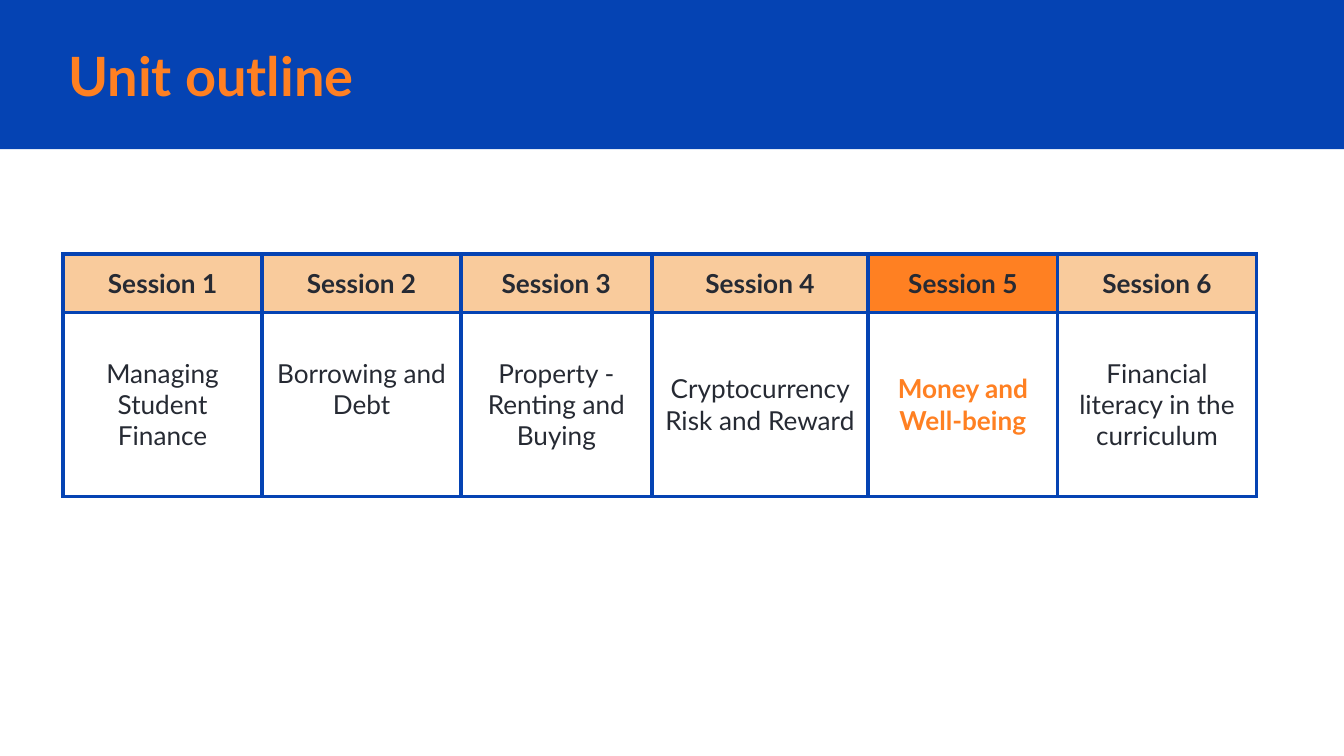
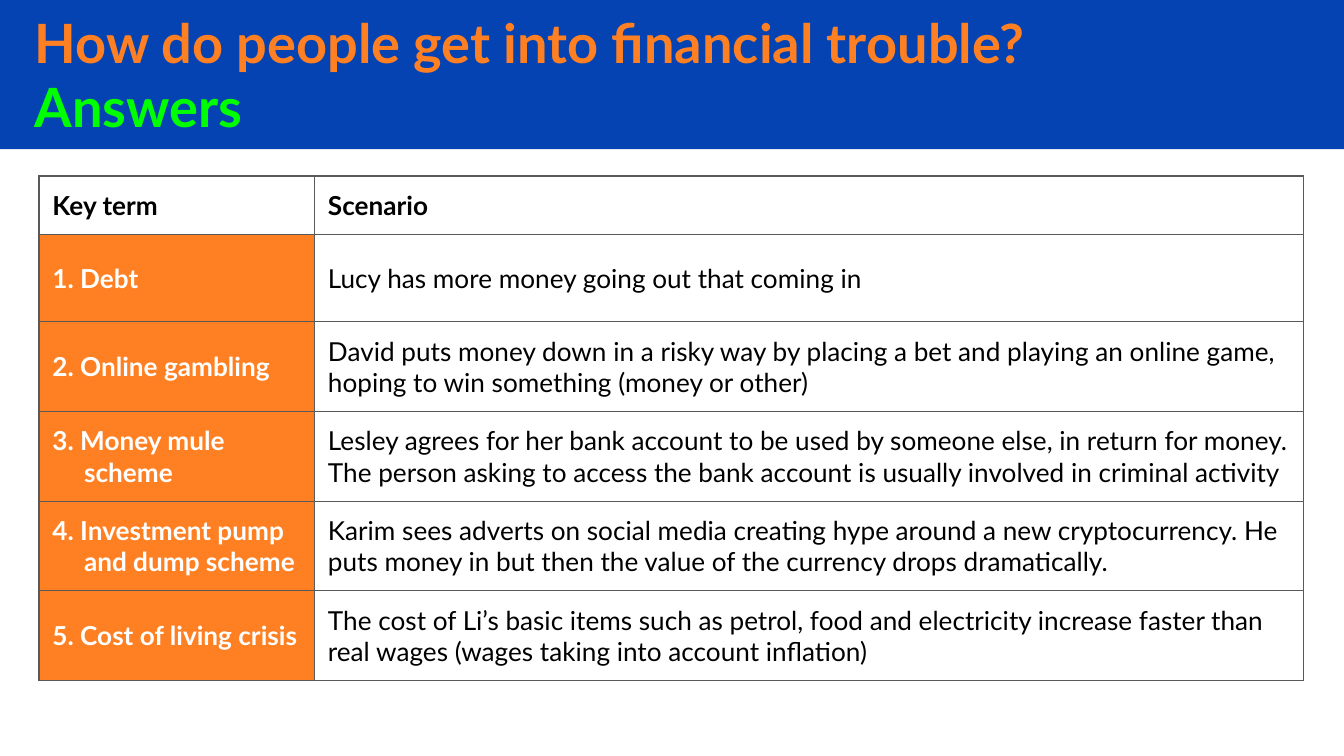
from lxml import etree
from pptx import Presentation
from pptx.dml.color import RGBColor
from pptx.enum.shapes import MSO_SHAPE
from pptx.enum.text import MSO_ANCHOR, PP_ALIGN
from pptx.oxml.ns import qn
from pptx.util import Pt

RECTANGLE = MSO_SHAPE.RECTANGLE
MIDDLE = MSO_ANCHOR.MIDDLE
LEFT, CENTER = PP_ALIGN.LEFT, PP_ALIGN.CENTER

BLUE = RGBColor(0x05, 0x43, 0xB3)
ORANGE = RGBColor(0xFF, 0x80, 0x22)
PEACH = RGBColor(0xF9, 0xCB, 0x9C)
GREEN = RGBColor(0x00, 0xFF, 0x00)
INK = RGBColor(0x26, 0x2A, 0x33)
GREY = RGBColor(0x59, 0x59, 0x59)
BLACK = RGBColor(0x00, 0x00, 0x00)
WHITE = RGBColor(0xFF, 0xFF, 0xFF)

FONT = "Lato"
TITLE_SIZE, TABLE_SIZE = 29, 14
PX = 4572
PAGE_WIDTH, PAGE_HEIGHT, BAND_HEIGHT = 2000, 1125, 222
MARGIN = 20
HANGING_INDENT = 47
BLANK_LAYOUT = 6

SESSIONS = [
    ("Managing Student Finance", 296),
    ("Borrowing and Debt", 296),
    ("Property - Renting and Buying", 284),
    ("Cryptocurrency Risk and Reward", 322),
    ("Money and Well-being", 282),
    ("Financial literacy in the curriculum", 296),
]
CURRENT_SESSION = 5
RAISED_SESSION = 2
RAISED_MARGIN = 66

SCENARIOS = [
    ("1. Debt", "Lucy has more money going out that coming in"),
    ("2. Online gambling",
     "David puts money down in a risky way by placing a bet and playing an online game, "
     "hoping to win something (money or other)"),
    ("3. Money mule\nscheme",
     "Lesley agrees for her bank account to be used by someone else, in return for money. "
     "The person asking to access the bank account is usually involved in criminal activity"),
    ("4. Investment pump\nand dump scheme",
     "Karim sees adverts on social media creating hype around a new cryptocurrency. He puts "
     "money in but then the value of the currency drops dramatically."),
    ("5. Cost of living crisis",
     "The cost of Li’s basic items such as petrol, food and electricity increase faster than "
     "real wages (wages taking into account inflation)"),
]


def scale(*lengths):
    """Turn px lengths into EMU."""
    return [length * PX for length in lengths]


def style_font(font, size, color, bold):
    """Apply the deck typeface with a size, colour and weight."""
    font.name, font.size, font.bold = FONT, Pt(size), bold
    font.color.rgb = color


def set_margins(holder):
    """Give a cell or text frame equal margins on all sides."""
    for side in ("left", "top", "right", "bottom"):
        setattr(holder, f"margin_{side}", MARGIN * PX)


def add_titled_page(deck, box, parts):
    """Add a page with the blue band and a title made of coloured parts."""
    page = deck.slides.add_slide(deck.slide_layouts[BLANK_LAYOUT])
    band = page.shapes.add_shape(RECTANGLE, *scale(0, 0, PAGE_WIDTH, BAND_HEIGHT))
    band.shadow.inherit = False
    band.fill.solid()
    band.fill.fore_color.rgb = BLUE
    band.line.fill.background()

    frame = page.shapes.add_textbox(*scale(*box)).text_frame
    frame.word_wrap = True
    frame.vertical_anchor = MIDDLE
    set_margins(frame)
    for text, color in parts:
        span = frame.paragraphs[0].add_run()
        span.text = text
        style_font(span.font, TITLE_SIZE, color, True)
    return page


def add_grid(page, left, top, widths, heights):
    """Add a plain table with the given column widths and row heights."""
    frame = page.shapes.add_table(
        len(heights), len(widths), *scale(left, top, sum(widths), sum(heights)))
    table = frame.table
    table.first_row = table.horz_banding = False
    for column, width in zip(table.columns, widths):
        column.width = width * PX
    for row, height in zip(table.rows, heights):
        row.height = height * PX
    return table


def add_borders(cell, color, weight):
    """Draw a solid line on the four sides of a cell."""
    properties = cell._tc.get_or_add_tcPr()
    for side in ("lnL", "lnR", "lnT", "lnB"):
        line = etree.SubElement(properties, qn(f"a:{side}"), w=str(Pt(weight)))
        fill = etree.SubElement(line, qn("a:solidFill"))
        etree.SubElement(fill, qn("a:srgbClr"), val=str(color))


def fill_cell(cell, text, color, bold, fill, border, align=LEFT):
    """Write and style one cell, indenting lines after the first."""
    cell.text_frame.text = text
    cell.vertical_anchor = MIDDLE
    set_margins(cell)
    add_borders(cell, *border)
    cell.fill.solid()
    cell.fill.fore_color.rgb = fill
    for index, para in enumerate(cell.text_frame.paragraphs):
        para.alignment = align
        if index:
            para._p.get_or_add_pPr().set("marL", str(HANGING_INDENT * PX))
        for span in para.runs:
            style_font(span.font, TABLE_SIZE, color, bold)


def add_outline_page(deck):
    """Add the unit outline with the current session highlighted."""
    page = add_titled_page(deck, (82, 56, 1692, 112), [("Unit outline", ORANGE)])
    table = add_grid(page, 94, 378, [width for _, width in SESSIONS], [87, 274])
    border = (BLUE, 2.25)
    for number, (topic, _) in enumerate(SESSIONS, 1):
        current = number == CURRENT_SESSION
        heading, body = table.cell(0, number - 1), table.cell(1, number - 1)
        fill_cell(heading, f"Session {number}", INK, True,
                  ORANGE if current else PEACH, border, CENTER)
        fill_cell(body, topic, ORANGE if current else INK, current, WHITE, border, CENTER)
        if number == RAISED_SESSION:
            body.margin_bottom = RAISED_MARGIN * PX


def add_answers_page(deck):
    """Add the table matching key terms to scenarios."""
    page = add_titled_page(
        deck, (32, 54, 1770, 112),
        [("How do people get into financial trouble? ", ORANGE), ("Answers", GREEN)])
    table = add_grid(page, 58, 262, [410, 1472], [87, 130] + [133] * 4)
    border = (GREY, 0.75)
    for column, heading in enumerate(("Key term", "Scenario")):
        fill_cell(table.cell(0, column), heading, BLACK, True, WHITE, border)
    for row, (term, scenario) in enumerate(SCENARIOS, 1):
        fill_cell(table.cell(row, 0), term, WHITE, True, ORANGE, border)
        fill_cell(table.cell(row, 1), scenario, BLACK, False, WHITE, border)


def main():
    """Build and save the deck."""
    deck = Presentation()
    deck.slide_width, deck.slide_height = scale(PAGE_WIDTH, PAGE_HEIGHT)
    add_outline_page(deck)
    add_answers_page(deck)
    deck.save("out.pptx")


if __name__ == "__main__":
    main()
